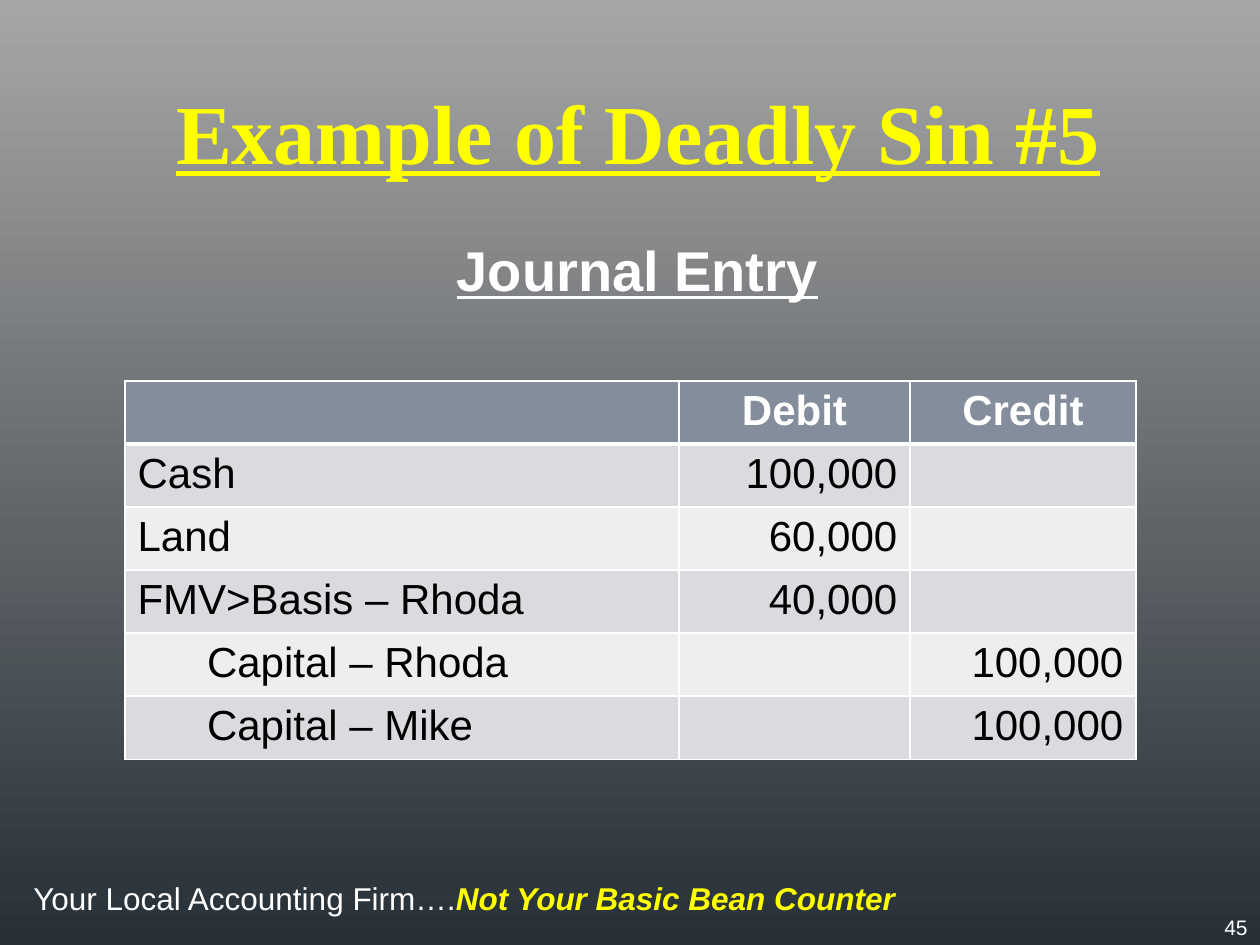
from dataclasses import dataclass

from lxml.etree import SubElement
from pptx import Presentation
from pptx.dml.color import RGBColor
from pptx.enum.text import MSO_ANCHOR, PP_ALIGN
from pptx.oxml.ns import qn
from pptx.util import Pt

EMU_PER_PX = 914400 / 126


def px(length):
    return round(length * EMU_PER_PX)


@dataclass(frozen=True)
class Theme:
    white: str = "FFFFFF"
    black: str = "000000"
    accent: str = "FFFF00"
    header: str = "838D9B"
    bands: tuple = ("D9DBDE", "EDEEEF")
    background: tuple = ("A6A6A6", "273037")
    sans: str = "Arial"
    serif: str = "Times New Roman"
    title: int = 48
    subtitle: int = 32
    table: int = 24
    footer: int = 18
    number: int = 12


class SlideBuilder:
    def __init__(self, slide, theme):
        self.slide = slide
        self.theme = theme

    def background(self):
        fill = self.slide.background.fill
        fill.gradient()
        fill.gradient_angle = 270
        for stop, color in zip(fill.gradient_stops, self.theme.background):
            stop.color.rgb = RGBColor.from_string(color)

    def style(self, font, size, color, name=None, bold=False, italic=False, underline=False):
        font.name = name or self.theme.sans
        font.size = Pt(size)
        font.color.rgb = RGBColor.from_string(color)
        font.bold = bold
        font.italic = italic
        font.underline = underline

    def text(self, box, text, size, color, align=PP_ALIGN.LEFT, anchor=MSO_ANCHOR.TOP, **look):
        shape = self.slide.shapes.add_textbox(*map(px, box))
        text_frame = shape.text_frame
        text_frame.word_wrap = True
        text_frame.vertical_anchor = anchor
        text_frame.text = text
        paragraph = text_frame.paragraphs[0]
        paragraph.alignment = align
        self.style(paragraph.runs[0].font, size, color, **look)
        return paragraph

    def border(self, cell, side, points):
        line = SubElement(cell._tc.get_or_add_tcPr(), qn(f"a:ln{side}"), w=str(Pt(points)))
        fill = SubElement(line, qn("a:solidFill"))
        SubElement(fill, qn("a:srgbClr"), val=self.theme.white)

    def cell(self, cell, text, fill, color, align, is_header, thick_sides):
        for side in "LRTB":
            self.border(cell, side, 3 if side in thick_sides else 1)
        cell.fill.solid()
        cell.fill.fore_color.rgb = RGBColor.from_string(fill)
        if text:
            cell.text_frame.text = text
            paragraph = cell.text_frame.paragraphs[0]
            paragraph.alignment = align
            self.style(paragraph.runs[0].font, self.theme.table, color, bold=is_header)

    def table(self, left, top, widths, row_height, rows, indented_rows, indent):
        theme = self.theme
        frame = self.slide.shapes.add_table(
            len(rows), len(widths), px(left), px(top), px(sum(widths)), px(row_height * len(rows)))
        table = frame.table
        table.first_row = table.horz_banding = False
        for column, width in zip(table.columns, widths):
            column.width = px(width)
        for i, values in enumerate(rows):
            table.rows[i].height = px(row_height)
            is_header = i == 0
            fill = theme.header if is_header else theme.bands[(i - 1) % 2]
            color = theme.white if is_header else theme.black
            thick_sides = {0: "B", 1: "T"}.get(i, "")
            for j, value in enumerate(values):
                if is_header:
                    align = PP_ALIGN.CENTER
                else:
                    align = PP_ALIGN.RIGHT if j else PP_ALIGN.LEFT
                self.cell(table.cell(i, j), value, fill, color, align, is_header, thick_sides)
            if i in indented_rows:
                table.cell(i, 0).margin_left = px(indent)


def main():
    presentation = Presentation()
    presentation.slide_width, presentation.slide_height = px(1260), px(945)
    slide = presentation.slides.add_slide(presentation.slide_layouts[6])
    theme = Theme()
    builder = SlideBuilder(slide, theme)
    builder.background()

    # Footer and slide number
    footer = builder.text((21, 873, 956, 50), "Your Local Accounting Firm….", theme.footer, theme.white)
    tagline = footer.add_run()
    tagline.text = "Not Your Basic Bean Counter"
    builder.style(tagline.font, theme.footer, theme.accent, bold=True, italic=True)
    builder.text((1130, 906, 130, 42), "45", theme.number, theme.white,
                 PP_ALIGN.RIGHT, MSO_ANCHOR.MIDDLE)

    # Headings
    builder.text((125, 74, 1026, 115), "Example of Deadly Sin #5", theme.title, theme.accent,
                 PP_ALIGN.CENTER, name=theme.serif, bold=True, underline=True)
    builder.text((330, 229, 615, 81), "Journal Entry", theme.subtitle, theme.white,
                 PP_ALIGN.CENTER, bold=True, underline=True)

    # Journal entry table
    entries = [
        ("", "Debit", "Credit"),
        ("Cash", "100,000", ""),
        ("Land", "60,000", ""),
        ("FMV>Basis – Rhoda", "40,000", ""),
        ("Capital – Rhoda", "", "100,000"),
        ("Capital – Mike", "", "100,000"),
    ]
    builder.table(125, 381, (554, 231, 226), 63, entries, indented_rows=(4, 5), indent=82)

    presentation.save("out.pptx")


if __name__ == "__main__":
    main()
